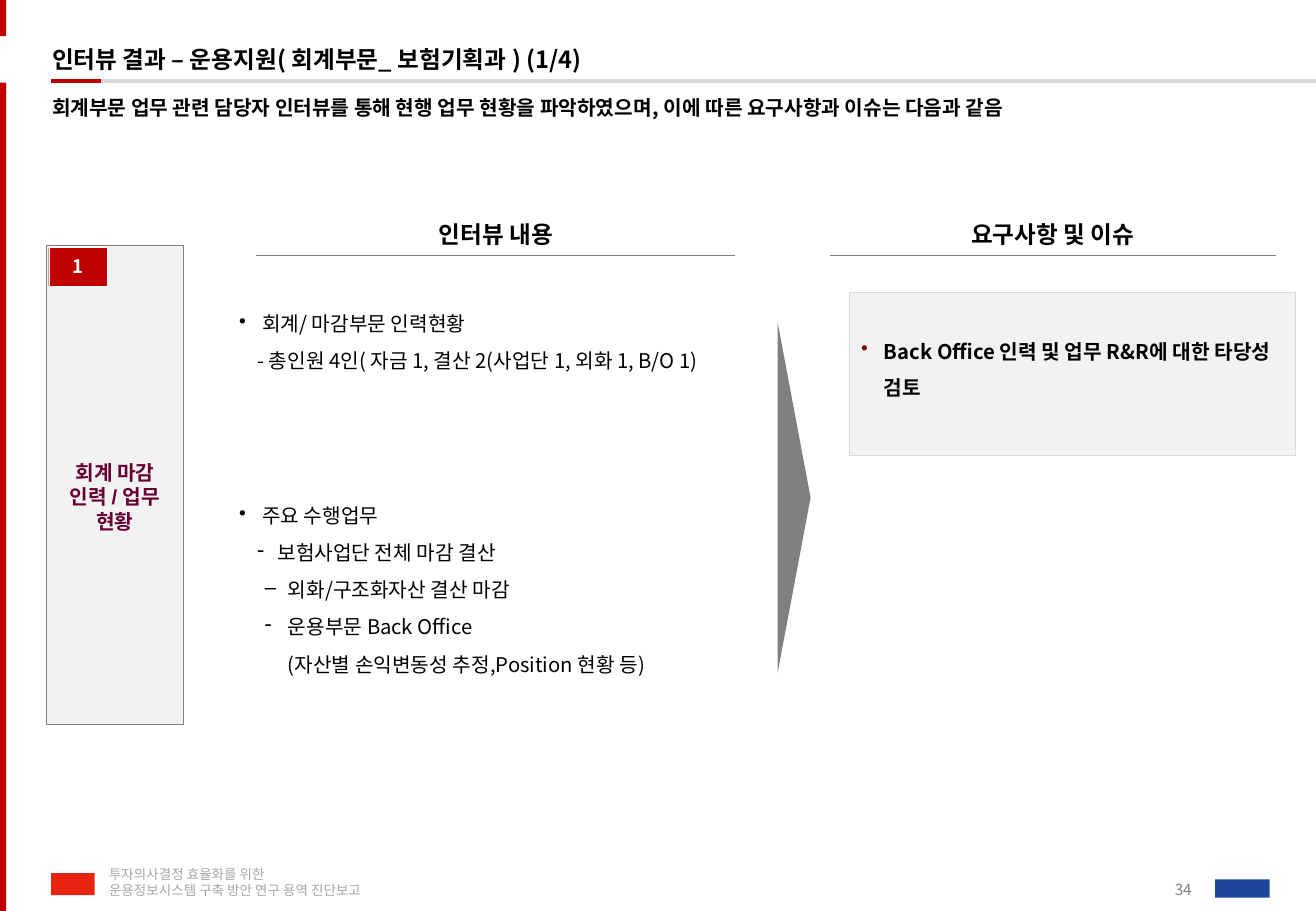
from lxml import etree
from pptx import Presentation
from pptx import util as u
from pptx.dml.color import RGBColor
from pptx.enum import shapes, text
from pptx.oxml import ns

COLORS = {
    "red": "C00000", "gray": "808080", "rule": "D8D8D8", "footer": "A6A6A6",
    "panel": "F2F2F2", "edge": "D9D9D9", "plum": "660033", "bullet": "7D0900",
    "black": "000000", "white": "FFFFFF", "emblem": "E72410", "badge": "1C459B",
}
FONT = "Noto Sans CJK KR"
TITLE = "인터뷰 결과 – 운용지원( 회계부문_ 보험기획과 ) (1/4)"
LEAD = "회계부문 업무 관련 담당자 인터뷰를 통해 현행 업무 현황을 파악하였으며, 이에 따른 요구사항과 이슈는 다음과 같음"
FOOTER = ["투자의사결정 효율화를 위한", "운용정보시스템 구축 방안 연구 용역 진단보고"]
PAGE_NUMBER = "34"
TOPIC_NUMBER = "1"
TOPIC = [("회계 마감 인력 / 업무", "Arial"), ("현황", FONT)]
COLUMNS = [("인터뷰 내용", 5.36, 10.01), ("요구사항 및 이슈", 17.35, 9.32)]
STAFF = [
    ("회계/ 마감부문 인력현황", "•", 0.48, -0.48),
    ("- 총인원 4인( 자금 1, 결산 2(사업단 1, 외화 1, B/O 1)", None, 0, 0.38),
]
TASKS = [
    ("주요 수행업무", "•", 0.48, -0.48),
    ("보험사업단 전체 마감 결산", "-", 0.8, -0.42),
    ("외화/구조화자산 결산 마감", "–", 1.02, -0.48),
    ("운용부문 Back Office\v(자산별 손익변동성 추정,Position 현황 등)", "-", 1.02, -0.48),
]
ISSUE = "Back Office 인력 및 업무 R&R에 대한 타당성 검토"
INTERVIEWS = [(STAFF, 6.12, 10.8, 2.01), (TASKS, 10.13, 10.01, 5.21)]
HEADING_TOP, HEADING_HEIGHT = 4.47, 0.86
TITLE_RULE = 1.7
DEFAULT_INSETS = (0.25, 0.13, 0.25, 0.13)

deck = Presentation()
deck.slide_width, deck.slide_height = u.Cm(27.51), u.Cm(19.05)
page = deck.slides.add_slide(deck.slide_layouts[6])


def color(name):
    return RGBColor.from_string(COLORS[name])


def add_box(left, top, width, height, fill, line=None, kind=shapes.MSO_SHAPE.RECTANGLE):
    box = page.shapes.add_shape(kind, *map(u.Cm, (left, top, width, height)))
    box.shadow.inherit = False
    box.fill.solid()
    box.fill.fore_color.rgb = color(fill)
    if line:
        box.line.color.rgb = color(line)
        box.line.width = u.Pt(0.25)
    else:
        box.line.fill.background()
    return box


def add_text(left, top, width, height):
    return page.shapes.add_textbox(*map(u.Cm, (left, top, width, height)))


def add_line(left, right, y, name, width):
    line = page.shapes.add_connector(
        shapes.MSO_CONNECTOR.STRAIGHT, u.Cm(left), u.Cm(y), u.Cm(right), u.Cm(y))
    line.line.color.rgb = color(name)
    line.line.width = u.Pt(width)
    etree.SubElement(line._element.spPr, ns.qn("a:effectLst"))


def frame_of(box, anchor="TOP", insets=DEFAULT_INSETS):
    frame = box.text_frame
    frame.word_wrap = True
    frame.vertical_anchor = getattr(text.MSO_ANCHOR, anchor)
    frame.margin_left, frame.margin_top, frame.margin_right, frame.margin_bottom = map(u.Cm, insets)
    return frame


def write(frame, words, size, name="black", bold=False, align="LEFT", spacing=None,
          font=FONT, bullet=None, left=0, first=0, bullet_color=None):
    para = frame.paragraphs[0]
    if para.runs:
        para = frame.add_paragraph()
    para.text = words
    para.alignment = getattr(text.PP_ALIGN, align)
    if spacing:
        para.line_spacing = spacing
    props = para._p.get_or_add_pPr()
    props.set("marL", str(u.Cm(left)))
    props.set("indent", str(u.Cm(first)))
    if bullet_color:
        holder = etree.SubElement(props, ns.qn("a:buClr"))
        etree.SubElement(holder, ns.qn("a:srgbClr"), val=COLORS[bullet_color])
    if bullet:
        etree.SubElement(props, ns.qn("a:buChar"), char=bullet)
    para.font.size = u.Pt(size)
    para.font.bold = bold
    para.font.name = font
    para.font.color.rgb = color(name)
    etree.SubElement(props.find(ns.qn("a:defRPr")), ns.qn("a:ea"), typeface=FONT)


add_box(0, 1.73, 0.13, 17.32, "red")
add_box(0, 0, 0.13, 0.76, "red")
add_line(1.07, 27.51, TITLE_RULE, "rule", 2.25)
add_line(1.07, 2.11, TITLE_RULE, "red", 2.25)

write(frame_of(add_text(1.09, 0.79, 20.47, 0.89), "MIDDLE", (0, 0, 0, 0)), TITLE, 14, bold=True)
write(frame_of(add_text(1.09, TITLE_RULE, 25.58, 1.7), insets=(0, 0.2, 0, 0.3)),
      LEAD, 12, bold=True, spacing=1.2)

topic = frame_of(add_box(0.97, 5.13, 2.87, 10.01, "panel", "gray"), "MIDDLE", (0.25, 0.64, 0.25, 0.13))
for words, font in TOPIC:
    write(topic, words, 12, "plum", True, "CENTER", font=font)
number = frame_of(add_box(1.02, 5.18, 1.22, 0.81, "red", "white"), "MIDDLE", (0, 0.2, 0, 0.2))
write(number, TOPIC_NUMBER, 11, "white", True, "CENTER", 0.9)

for heading, left, width in COLUMNS:
    add_line(left, left + width, HEADING_TOP + HEADING_HEIGHT, "gray", 0.25)
    write(frame_of(add_text(left, HEADING_TOP, width, HEADING_HEIGHT)),
          heading, 14, bold=True, align="CENTER")

for items, top, width, height in INTERVIEWS:
    frame = frame_of(add_text(4.75, top, width, height))
    for words, bullet, left, first in items:
        write(frame, words, 12, spacing=u.Pt(22), bullet=bullet, left=left, first=first)

arrow = add_box(12.93, 10.06, 7.34, 0.69, "gray", kind=shapes.MSO_SHAPE.ISOSCELES_TRIANGLE)
arrow.rotation = 90

issue = frame_of(add_box(17.75, 6.12, 9.32, 3.4, "panel", "edge"), "MIDDLE", (0.25, 0.13, 0.25, 0.58))
write(issue, ISSUE, 12, bold=True, spacing=1.5, bullet="•", left=0.48, first=-0.48,
      bullet_color="bullet")

add_box(1.07, 18.26, 0.91, 0.46, "emblem")
footer = frame_of(add_text(2.03, 18.01, 7.11, 0.89), "MIDDLE")
for words in FOOTER:
    write(footer, words, 8, "footer")
write(frame_of(add_text(23.44, 18.14, 1.47, 0.91), "MIDDLE", (0, 0, 0, 0)),
      PAGE_NUMBER, 9, "gray", align="RIGHT")
add_box(25.4, 18.39, 1.14, 0.38, "badge")

deck.save("out.pptx")
